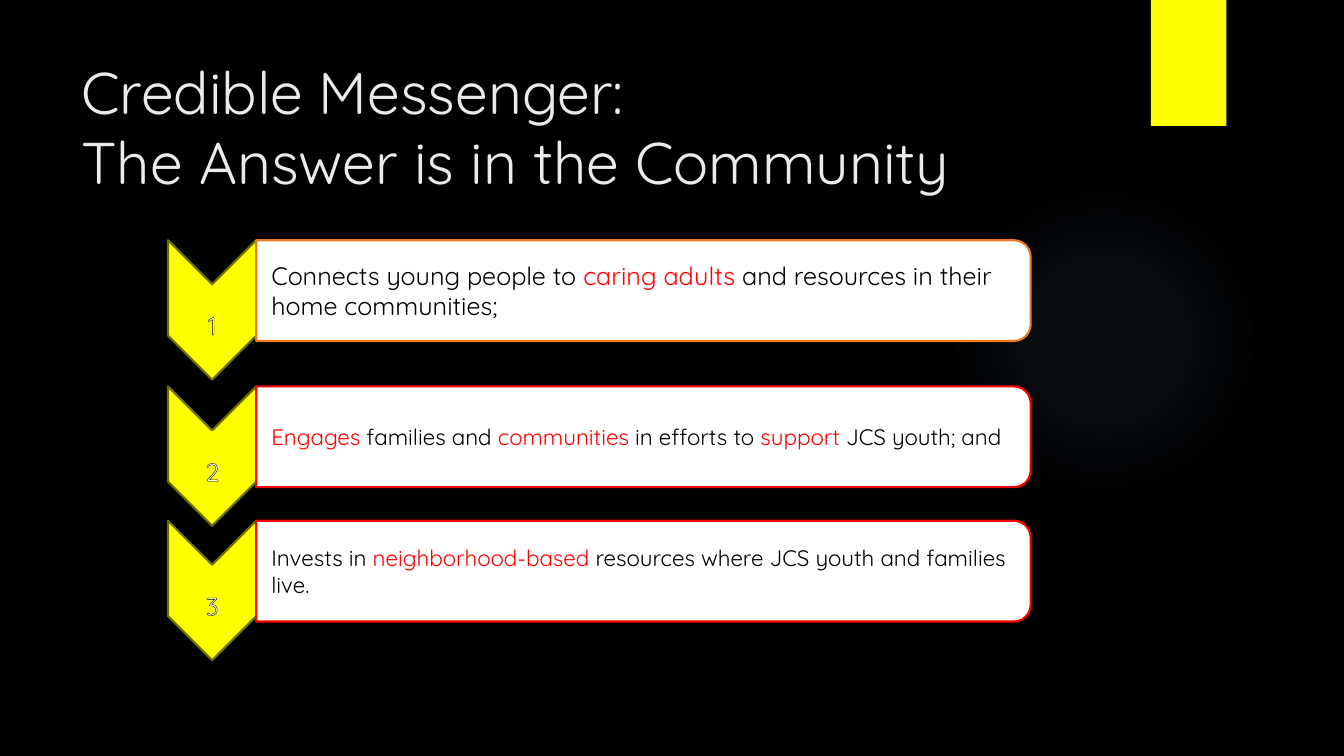
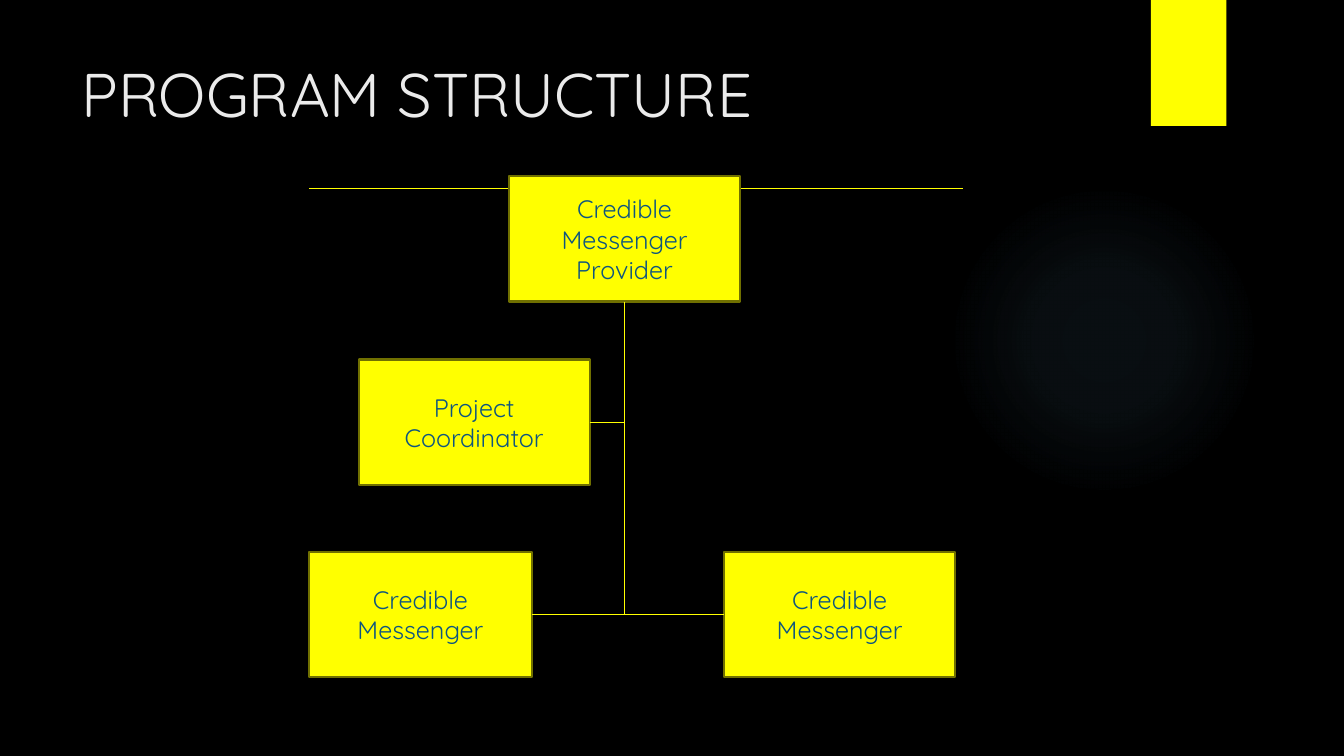
from lxml import etree
from pptx import Presentation
from pptx import util as u
from pptx.dml import color
from pptx.enum import shapes, text
from pptx.oxml import parse_xml
from pptx.oxml import ns

CELL = u.Inches(1) / 12  # the slide is a grid of 160 columns by 90 rows
COLUMNS, ROWS = 160, 90
FONT = "Quicksand"
COLORS = {
    "background": "000000", "title": "EBEBEB", "yellow": "FFFF00",
    "olive": "707000", "white": "FFFFFF", "black": "000000", "red": "FF0000",
    "orange": "EF7A24", "blue": "0E5580", "glow": "7AC4F0",
}
GLOW_STOPS = ((0, 7), (36, 6), (69, 0))  # position and opacity, in percent

STEP_TEXTS = (
    (28.6, "orange", 18, (("Connects young people to ", "black"), ("caring adults ", "red"),
                          ("and resources in their home communities;", "black"))),
    (46, "red", 16, (("Engages", "red"), (" families and ", "black"), ("communities", "red"),
                     (" in efforts to ", "black"), ("support", "red"),
                     (" JCS youth; and", "black"))),
    (62, "red", 16, (("Invests in ", "black"), ("neighborhood-based", "red"),
                     (" resources where JCS youth and families live.", "black"))),
)


def cells(*counts):
    return [round(count * CELL) for count in counts]


def rgb(name):
    return color.RGBColor.from_string(COLORS[name])


def apply(target, values):
    for name, value in values.items():
        setattr(target, name, value)


def write(frame, spans, size, align, **frame_format):
    """Fill a frame with one paragraph of (text, colour) spans; newlines break lines."""
    apply(frame, {"word_wrap": True, **frame_format})
    para = frame.paragraphs[0]
    para.alignment = align
    for words, ink in spans:
        for index, line in enumerate(words.split("\n")):
            if index:
                para.add_line_break()
            span = para.add_run()
            span.text = line
            apply(span.font, {"name": FONT, "size": u.Pt(size)})
            span.font.color.rgb = rgb(ink)
    return para


def add_block(page, kind, place, fill, line=None, rotation=0):
    """Draw a flat shape; place is its unrotated left, top, width and height."""
    block = page.shapes.add_shape(kind, *cells(*place))
    block.shadow.inherit = False
    block.rotation = rotation
    block.fill.solid()
    block.fill.fore_color.rgb = rgb(fill)
    if line:
        block.line.color.rgb = rgb(line)
        block.line.width = u.Pt(1.5)
    else:
        block.line.fill.background()
    return block


def add_turned_block(page, kind, left, top, width, height, fill, line):
    """Draw a shape turned a quarter clockwise that covers the given area."""
    shift = (width - height) / 2
    return add_block(page, kind, (left + shift, top - shift, height, width), fill, line, 90)


def add_glow(page):
    glow = add_block(page, shapes.MSO_SHAPE.OVAL, (112.9, 22, 37, 37), "glow")
    stops = "".join(
        f'<a:gs pos="{position * 1000}"><a:srgbClr val="{COLORS["glow"]}">'
        f'<a:alpha val="{opacity * 1000}"/></a:srgbClr></a:gs>'
        for position, opacity in GLOW_STOPS)
    gradient = parse_xml(
        f'<a:gradFill {ns.nsdecls("a")}><a:gsLst>{stops}</a:gsLst><a:path path="circle">'
        '<a:fillToRect l="50000" t="50000" r="50000" b="50000"/></a:path></a:gradFill>')
    properties = glow.element.spPr
    properties.replace(properties.find(ns.qn("a:solidFill")), gradient)
    return glow


def style_layout(layout, page):
    """Give the layout its background, title place, glow and yellow tab."""
    layout.background.fill.solid()
    layout.background.fill.fore_color.rgb = rgb("background")
    place = dict(zip(("left", "top", "width", "height"), cells(8.5, 6, 123.5, 18.4)))
    apply(layout.placeholders[0], place)
    tab = add_block(page, shapes.MSO_SHAPE.RECTANGLE, (137, 0, 9, 15), "yellow")
    for decoration in (tab, add_glow(page)):
        layout.shapes.element.insert(2, decoration.element)


def set_title(page, words, size):
    write(page.shapes.title.text_frame, [(words, "title")], size, text.PP_ALIGN.LEFT,
          vertical_anchor=text.MSO_ANCHOR.TOP, auto_size=text.MSO_AUTO_SIZE.NONE)


def add_text_box(page, place, spans, size, align, **frame_format):
    box = page.shapes.add_textbox(*cells(*place))
    return write(box.text_frame, spans, size, align, **frame_format)


def outline(span):
    properties = span._r.get_or_add_rPr()
    properties.insert(0, parse_xml(
        f'<a:ln {ns.nsdecls("a")} w="9525"><a:solidFill>'
        f'<a:srgbClr val="{COLORS["black"]}"/></a:solidFill></a:ln>'))


def add_step(page, number, top, line, size, spans):
    chevron_left, chevron_width, panel_width = 20, 10.5, 92.2
    panel_left = chevron_left + chevron_width
    add_turned_block(page, shapes.MSO_SHAPE.CHEVRON, chevron_left, top,
                     chevron_width, 16.6, "yellow", "olive")
    para = add_text_box(page, (chevron_left, top + 7.7, chevron_width, 4.8),
                        [(str(number), "white")], 18, text.PP_ALIGN.CENTER,
                        auto_size=text.MSO_AUTO_SIZE.SHAPE_TO_FIT_TEXT)
    outline(para.runs[0])
    add_turned_block(page, shapes.MSO_SHAPE.ROUND_2_SAME_RECTANGLE, panel_left, top,
                     panel_width, 12, "white", line)
    edge = u.Inches(0.01)
    add_text_box(page, (panel_left, top + 0.6, panel_width - 0.6, 10.8), spans, size,
                 text.PP_ALIGN.LEFT, vertical_anchor=text.MSO_ANCHOR.MIDDLE,
                 margin_left=u.Inches(0.15), margin_right=edge,
                 margin_top=edge, margin_bottom=edge)


def add_role(page, words, left, top, width=27.5):
    role = add_block(page, shapes.MSO_SHAPE.RECTANGLE, (left, top, width, 14.9),
                     "yellow", "olive")
    write(role.text_frame, [(words, "blue")], 18, text.PP_ALIGN.CENTER,
          vertical_anchor=text.MSO_ANCHOR.MIDDLE)
    return role


def add_line(page, start, end, begin=None, finish=None):
    """Draw a line; begin and finish are optional (shape, side) joints."""
    line = page.shapes.add_connector(shapes.MSO_CONNECTOR.STRAIGHT, *cells(*start, *end))
    if begin:
        line.begin_connect(*begin)
    if finish:
        line.end_connect(*finish)
    line.line.color.rgb = rgb("yellow")
    line.line.width = u.Pt(0.75)
    etree.SubElement(line.element.spPr, ns.qn("a:effectLst"))


def fill_steps_page(page):
    set_title(page, "Credible Messenger:\nThe Answer is in the Community", 42)
    for number, step in enumerate(STEP_TEXTS, 1):
        add_step(page, number, *step)


def fill_structure_page(page):
    set_title(page, "PROGRAM STRUCTURE", 44)
    trunk, coordinator_row, messenger_row = 74.35, 50.25, 73.15
    add_line(page, (36.8, 22.4), (114.7, 22.4))
    provider = add_role(page, "Credible Messenger Provider", 60.6, 21)
    coordinator = add_role(page, "Project Coordinator", 42.7, 42.8)
    left_messenger = add_role(page, "Credible Messenger", 36.8, 65.7, 26.5)
    right_messenger = add_role(page, "Credible Messenger", 86.2, 65.7)
    add_line(page, (trunk, 35.9), (trunk, messenger_row), (provider, 2))
    add_line(page, (70.2, coordinator_row), (trunk, coordinator_row), (coordinator, 3))
    add_line(page, (63.3, messenger_row), (86.2, messenger_row),
             (left_messenger, 3), (right_messenger, 1))


def main():
    deck = Presentation()
    deck.slide_width, deck.slide_height = cells(COLUMNS, ROWS)
    layout = deck.slide_layouts.get_by_name("Title Only")
    pages = [deck.slides.add_slide(layout) for _ in range(2)]
    style_layout(layout, pages[0])
    fill_steps_page(pages[0])
    fill_structure_page(pages[1])
    deck.save("out.pptx")


if __name__ == "__main__":
    main()
